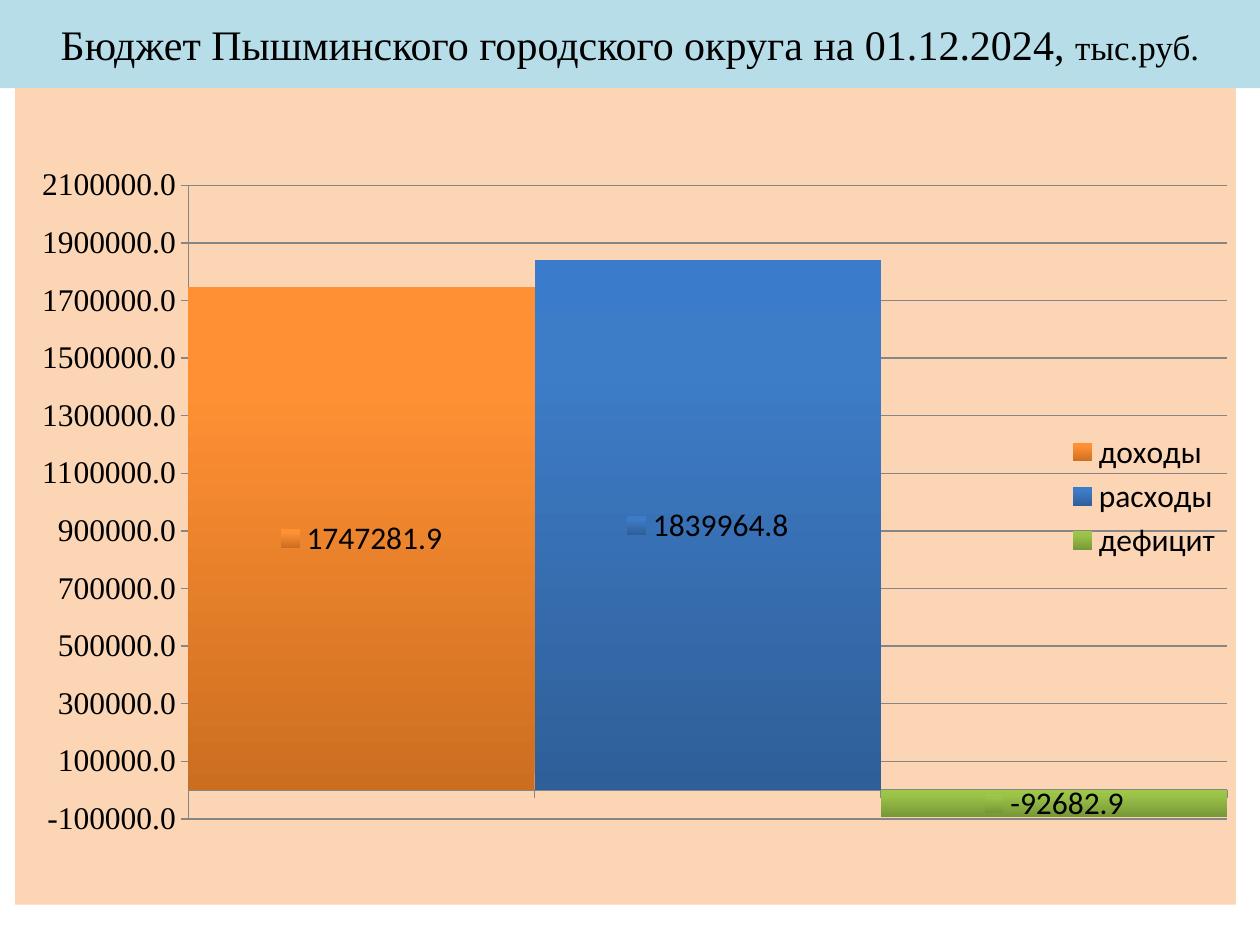
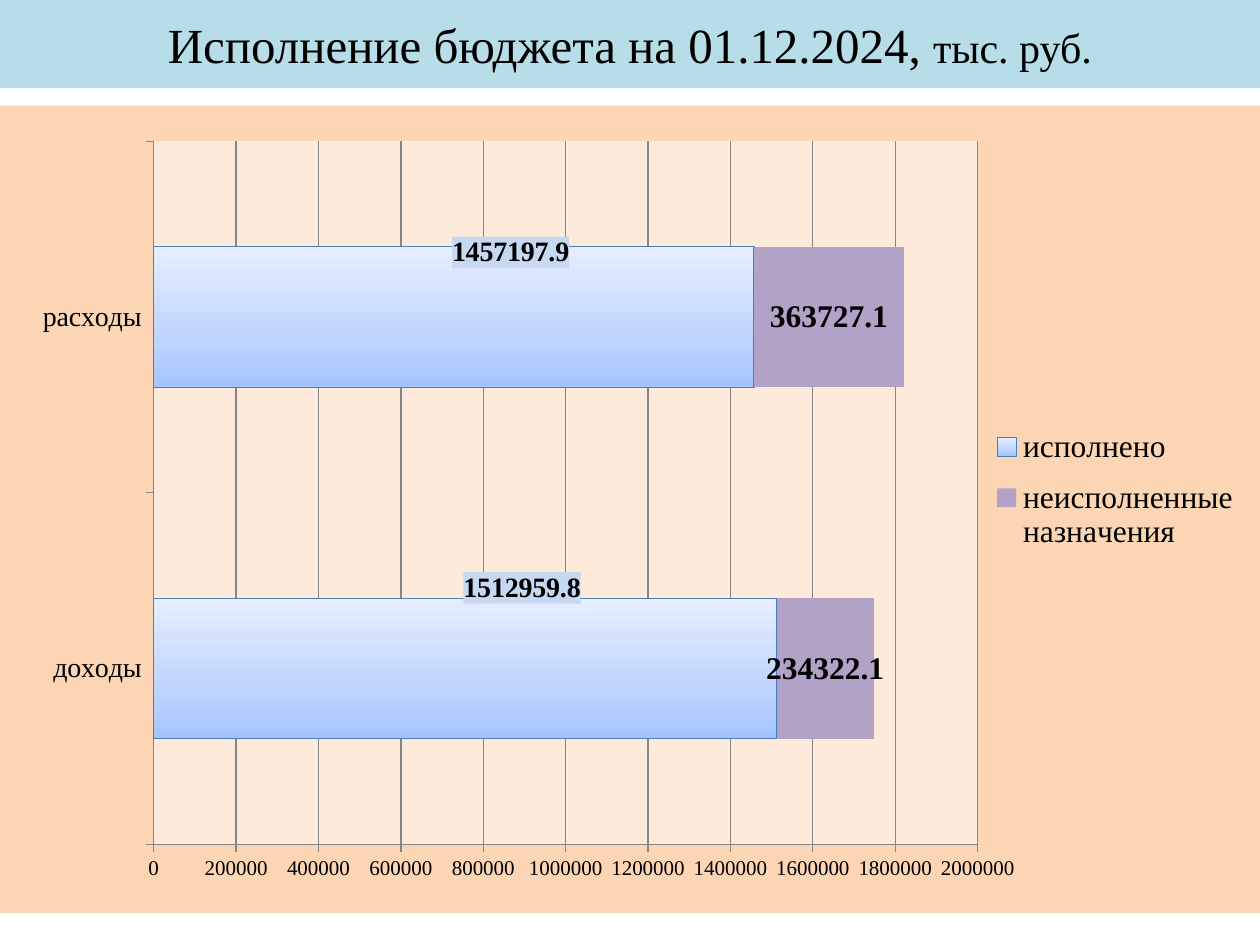
from copy import deepcopy
from dataclasses import dataclass

from lxml.etree import SubElement
from pptx import Presentation
from pptx.chart.data import CategoryChartData
from pptx.dml.color import RGBColor
from pptx.enum.chart import XL_CHART_TYPE as ChartType
from pptx.enum.chart import XL_LABEL_POSITION as LabelPosition
from pptx.enum.chart import XL_LEGEND_POSITION as LegendPosition
from pptx.enum.chart import XL_TICK_LABEL_POSITION as TickLabels
from pptx.enum.chart import XL_TICK_MARK as TickMark
from pptx.enum.shapes import MSO_SHAPE as Shape
from pptx.enum.text import MSO_ANCHOR as Anchor
from pptx.enum.text import PP_ALIGN as Align
from pptx.oxml import parse_xml
from pptx.oxml.ns import nsdecls, qn
from pptx.util import Pt


@dataclass(frozen=True)
class Theme:
    serif: str = "Times New Roman"
    sans: str = "Calibri"
    text: str = "000000"
    band: str = "B7DEE8"
    chart_back: str = "FCD5B5"
    plot_back: str = "FDEADA"
    label_back: str = "C6D9F1"
    grid: str = "868686"
    unexecuted: str = "B3A2C7"
    executed_line: str = "4B7EBC"
    # Gradient stops run from the bottom of a bar to its top
    income: tuple = ((0, "CC6E20"), (0.8, "FF9034"), (1, "FF9136"))
    expense: tuple = ((0, "2F5F99"), (0.8, "3D7CC7"), (1, "3A7CCB"))
    deficit: tuple = ((0, "779737"), (0.8, "9BC348"), (1, "9DC746"))
    executed: tuple = ((0, "A4C4FF"), (0.35, "BFD4FF"), (1, "E6EEFF"))
    large: int = 18
    medium: int = 16
    small: int = 12


THEME = Theme()
SLIDE_WIDTH, SLIDE_HEIGHT, BAND_HEIGHT = Pt(720), Pt(540), Pt(50.4)


def style_font(font, size, face=THEME.serif, bold=False):
    font.size, font.name, font.bold = Pt(size), face, bold
    font.color.rgb = RGBColor.from_string(THEME.text)


def fill_solid(fill, color):
    fill.solid()
    fill.fore_color.rgb = RGBColor.from_string(color)


def fill_gradient(fill, stops):
    fill.gradient()
    fill.gradient_angle = 90
    first = fill.gradient_stops[0]._gs
    first.addnext(deepcopy(first))
    for stop, (position, color) in zip(fill.gradient_stops, stops):
        stop.position = position
        stop.color.rgb = RGBColor.from_string(color)


def background(color):
    return parse_xml(
        f'<c:spPr {nsdecls("c", "a")}><a:solidFill><a:srgbClr val="{color}"/>'
        "</a:solidFill><a:ln><a:noFill/></a:ln></c:spPr>")


def manual_layout(**settings):
    layout = parse_xml(f'<c:layout {nsdecls("c")}><c:manualLayout/></c:layout>')
    for name, value in settings.items():
        SubElement(layout[0], qn(f"c:{name}")).set("val", str(value))
    return layout


def box_layout(box, **settings):
    x, y, w, h = box
    return manual_layout(**settings, xMode="edge", yMode="edge", x=x, y=y, w=w, h=h)


def add_title_band(slide, title, title_size, unit, unit_size):
    band = slide.shapes.add_shape(Shape.RECTANGLE, 0, 0, SLIDE_WIDTH, BAND_HEIGHT)
    band.shadow.inherit = False
    fill_solid(band.fill, THEME.band)
    band.line.fill.background()
    band.text_frame.word_wrap = True
    band.text_frame.vertical_anchor = Anchor.MIDDLE
    paragraph = band.text_frame.paragraphs[0]
    paragraph.alignment = Align.CENTER
    for text, size in ((title, title_size), (unit, unit_size)):
        run = paragraph.add_run()
        run.text = text
        style_font(run.font, size)


def add_budget_chart(slide, kind, box, categories, series, plot_box, legend_face):
    data = CategoryChartData(number_format="0.0")
    data.categories = categories
    for name, values in series:
        data.add_series(name, values)
    chart = slide.shapes.add_chart(kind, *map(Pt, box), data).chart
    chart.has_title = False
    style_font(chart.font, THEME.large, THEME.sans)
    chart.has_legend = True
    chart.legend.position = LegendPosition.RIGHT
    style_font(chart.legend.font, THEME.large, legend_face)

    # Backgrounds and the fixed inner plot area
    chart.element.find(qn("c:txPr")).addprevious(background(THEME.chart_back))
    plot_area = chart.element.find(".//" + qn("c:plotArea"))
    for automatic in plot_area.findall(qn("c:layout")):
        plot_area.remove(automatic)
    plot_area.insert(0, box_layout(plot_box, layoutTarget="inner"))
    return chart


def place_legend(chart, box):
    legend = chart.element.find(".//" + qn("c:legend"))
    for automatic in legend.findall(qn("c:layout")):
        legend.remove(automatic)
    legend.find(qn("c:legendPos")).addnext(box_layout(box))


def style_axes(chart, low, high, number_format, value_size):
    for axis, size in ((chart.category_axis, THEME.medium),
                       (chart.value_axis, value_size)):
        axis.major_tick_mark = TickMark.OUTSIDE
        axis.minor_tick_mark = TickMark.NONE
        axis.format.line.width = Pt(0.75)
        fill_solid(axis.format.line.fill, THEME.grid)
        style_font(axis.tick_labels.font, size)
    values = chart.value_axis
    values.minimum_scale, values.maximum_scale = low, high
    values.major_unit = 200000
    values.has_major_gridlines = True
    grid_line = values.major_gridlines.format.line
    grid_line.width = Pt(0.75)
    fill_solid(grid_line.fill, THEME.grid)
    values.tick_labels.number_format = number_format
    values.tick_labels.number_format_is_linked = False


def show_values(series, size, face=THEME.serif, bold=True):
    labels = series.data_labels
    labels.show_value = True
    labels.position = LabelPosition.CENTER
    labels.number_format, labels.number_format_is_linked = "0.0", False
    style_font(labels.font, size, face, bold)
    return labels


def hide_leader_lines(series):
    labels = series.data_labels._element
    for leader in labels.findall(qn("c:showLeaderLines")):
        leader.set("val", "0")
    labels.append(parse_xml(
        f'<c:extLst {nsdecls("c")}>'
        '<c:ext uri="{CE6537A1-D6FC-4f65-9D91-7224C49458BB}" xmlns:c15='
        '"http://schemas.microsoft.com/office/drawing/2012/chart">'
        '<c15:showLeaderLines val="0"/></c:ext></c:extLst>'))


def raise_label(series, index, dx, dy):
    label = series.points[index].data_label
    style_font(label.font, THEME.medium, bold=True)
    label.position = LabelPosition.CENTER
    entry = series.data_labels._element.findall(qn("c:dLbl"))[index]
    text_style = entry.find(qn("c:txPr"))
    text_style.addprevious(manual_layout(x=dx, y=dy))
    text_style.addprevious(background(THEME.label_back))


def build_budget_slide(slide):
    add_title_band(slide, "Бюджет Пышминского городского округа на 01.12.2024, ", 24,
                   "тыс.руб.", 20)
    chart = add_budget_chart(
        slide, ChartType.COLUMN_CLUSTERED, (8.6, 50.4, 697.7, 466.6),
        ("доходы", "расходы", "дефицит"),
        [("Series 1", (1747281.9, 1839964.8, -92682.9))],
        (0.142, 0.119, 0.851, 0.776), THEME.sans)
    chart.legend.include_in_layout = True
    style_axes(chart, -100000, 2100000, "0.0", THEME.large)
    chart.category_axis.tick_label_position = TickLabels.NONE

    plot = chart.plots[0]
    plot.gap_width = 0
    plot.vary_by_categories = True
    budget = plot.series[0]
    budget.invert_if_negative = False
    for index, stops in enumerate((THEME.income, THEME.expense, THEME.deficit)):
        fill_gradient(budget.points[index].format.fill, stops)
    labels = show_values(budget, THEME.large, THEME.sans, bold=False)
    labels.show_legend_key = True


def build_execution_slide(slide):
    add_title_band(slide, "Исполнение бюджета на 01.12.2024, ", 28, "тыс. руб.", 24)
    chart = add_budget_chart(
        slide, ChartType.BAR_STACKED, (0, 60.4, 720, 461.4),
        ("доходы", "расходы"),
        [("исполнено", (1512959.8, 1457197.9)),
         ("неисполненные назначения", (234322.1, 363727.1))],
        (0.122, 0.044, 0.654, 0.871), THEME.serif)
    chart.legend.include_in_layout = False
    place_legend(chart, (0.78, 0.38, 0.21, 0.19))
    style_axes(chart, 0, 2000000, "0", THEME.small)
    chart.element.find(".//" + qn("c:plotArea")).append(background(THEME.plot_back))

    plot = chart.plots[0]
    plot.gap_width, plot.overlap = 150, 100
    plot.vary_by_categories = False
    executed, unexecuted = plot.series
    fill_gradient(executed.format.fill, THEME.executed)
    executed.format.line.width = Pt(0.75)
    fill_solid(executed.format.line.fill, THEME.executed_line)
    fill_solid(unexecuted.format.fill, THEME.unexecuted)

    # Executed amounts sit on the upper edge of their bars
    show_values(executed, THEME.medium)
    for index, dy in enumerate((-0.1, -0.08)):
        raise_label(executed, index, 0.045, dy)
    hide_leader_lines(executed)
    show_values(unexecuted, THEME.large)


def main():
    deck = Presentation()
    deck.slide_width, deck.slide_height = SLIDE_WIDTH, SLIDE_HEIGHT
    blank = deck.slide_layouts[6]
    for build in (build_budget_slide, build_execution_slide):
        build(deck.slides.add_slide(blank))
    deck.save("out.pptx")


if __name__ == "__main__":
    main()
